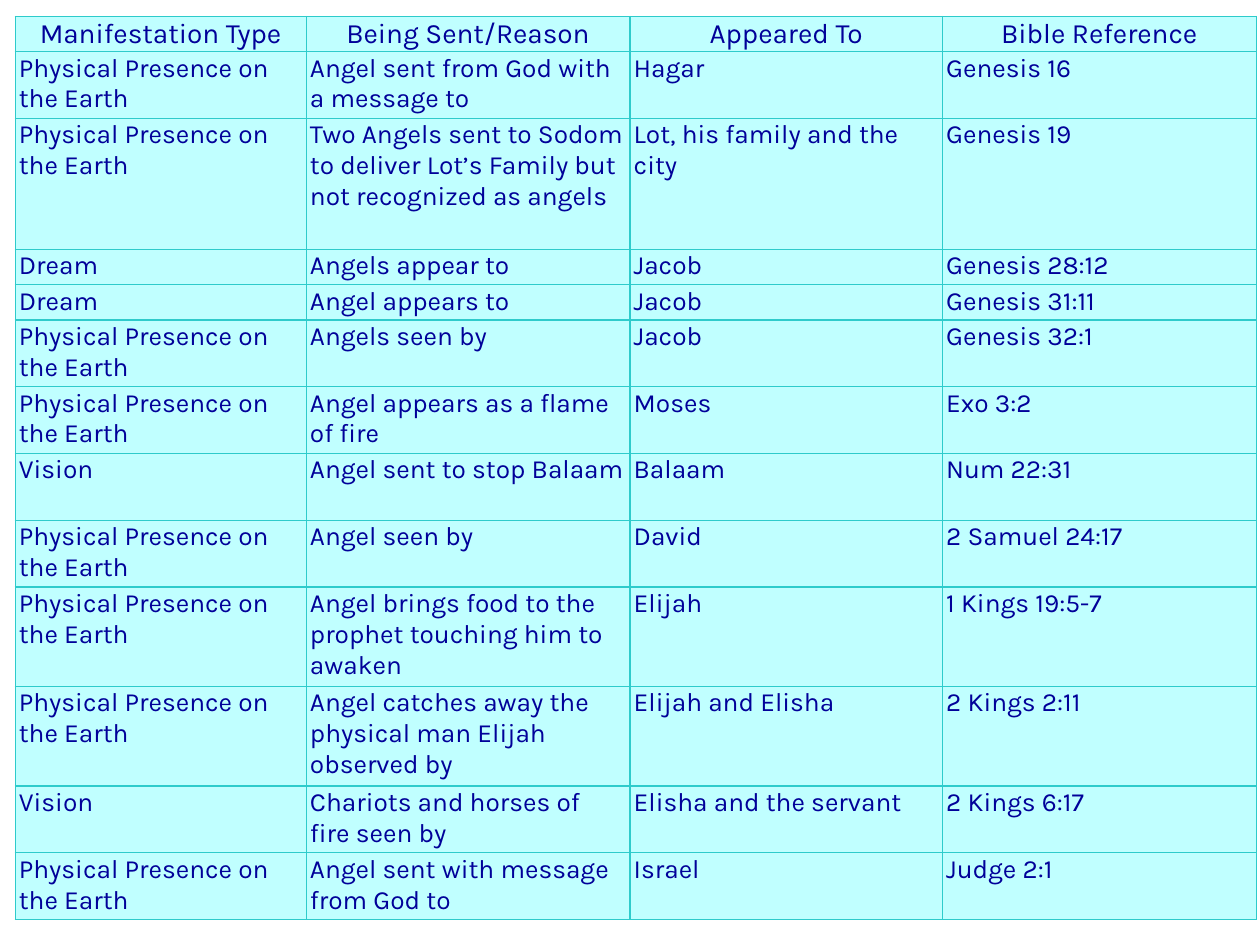
import dataclasses

import lxml.etree
import pptx
import pptx.dml.color
import pptx.enum.text
import pptx.oxml.ns
import pptx.util

Inches = pptx.util.Inches
Pt = pptx.util.Pt


@dataclasses.dataclass(frozen=True)
class Theme:
    font: str = "Karla"
    header_size: int = 16
    body_size: int = 15
    text: str = "010199"
    fill: str = "C0FFFF"
    border: str = "2ECBCB"
    border_width: float = 0.75


THEME = Theme()
COLUMN_WIDTHS = (2.31, 2.57, 2.48, 2.49)
ROW_HEIGHTS = {1: 0.28, 2: 0.53, 3: 0.79, 4: 1.04}  # by number of text lines
HEADINGS = ("Manifestation Type", "Being Sent/Reason", "Appeared To", "Bible Reference")
PRESENCE = "Physical Presence on the Earth"

# Lines of room, then the four cells
APPEARANCES = (
    (2, PRESENCE, "Angel sent from God with a message to", "Hagar", "Genesis 16"),
    (4, PRESENCE,
     "Two Angels sent to Sodom to deliver Lot’s Family but not recognized as angels",
     "Lot, his family and the city", "Genesis 19"),
    (1, "Dream", "Angels appear to", "Jacob", "Genesis 28:12"),
    (1, "Dream", "Angel appears to", "Jacob", "Genesis 31:11"),
    (2, PRESENCE, "Angels seen by", "Jacob", "Genesis 32:1"),
    (2, PRESENCE, "Angel appears as a flame of fire", "Moses", "Exo 3:2"),
    (2, "Vision", "Angel sent to stop Balaam", "Balaam", "Num 22:31"),
    (2, PRESENCE, "Angel seen by", "David", "2 Samuel 24:17"),
    (3, PRESENCE, "Angel brings food to the prophet touching him to awaken",
     "Elijah", "1 Kings 19:5-7"),
    (3, PRESENCE, "Angel catches away the physical man Elijah observed by",
     "Elijah and Elisha", "2 Kings 2:11"),
    (2, "Vision", "Chariots and horses of fire seen by",
     "Elisha and the servant", "2 Kings 6:17"),
    (2, PRESENCE, "Angel sent with message from God to", "Israel", "Judge 2:1"),
)


def rgb(value):
    return pptx.dml.color.RGBColor.from_string(value)


def draw_borders(cell):
    """Outline a cell; border elements must come before its fill."""
    qn = pptx.oxml.ns.qn
    properties = cell._tc.get_or_add_tcPr()
    for position, side in enumerate(("a:lnL", "a:lnR", "a:lnT", "a:lnB")):
        border = lxml.etree.Element(qn(side), w=str(Pt(THEME.border_width)))
        solid = lxml.etree.SubElement(border, qn("a:solidFill"))
        lxml.etree.SubElement(solid, qn("a:srgbClr"), val=THEME.border)
        properties.insert(position, border)


def fill_cell(cell, wording, is_heading):
    cell.margin_left = cell.margin_right = Inches(0.03)
    cell.margin_top = cell.margin_bottom = Inches(0.01)
    cell.fill.solid()
    cell.fill.fore_color.rgb = rgb(THEME.fill)
    draw_borders(cell)

    cell.text_frame.text = wording
    paragraph = cell.text_frame.paragraphs[0]
    if is_heading:
        paragraph.alignment = pptx.enum.text.PP_ALIGN.CENTER
    font = paragraph.runs[0].font
    font.name = THEME.font
    font.size = Pt(THEME.header_size if is_heading else THEME.body_size)
    font.bold = False
    font.color.rgb = rgb(THEME.text)


def add_appearances_table(slide, left, top, width, height):
    rows = ((1, *HEADINGS), *APPEARANCES)
    table = slide.shapes.add_table(
        len(rows), len(HEADINGS), left, top, width, height
    ).table
    table.horz_banding = False

    # Column widths share out the box
    for column, share in zip(table.columns, COLUMN_WIDTHS):
        column.width = int(width * share / sum(COLUMN_WIDTHS))

    # Headings and entries
    for row_index, (lines, *wordings) in enumerate(rows):
        table.rows[row_index].height = Inches(ROW_HEIGHTS[lines])
        for column_index, wording in enumerate(wordings):
            fill_cell(table.cell(row_index, column_index), wording, row_index == 0)


def main():
    presentation = pptx.Presentation()
    presentation.slide_width = Inches(10)
    presentation.slide_height = Inches(7.5)
    slide = presentation.slides.add_slide(presentation.slide_layouts[6])
    add_appearances_table(slide, Inches(0.12), Inches(0.13), Inches(9.85), Inches(7.18))
    presentation.save("out.pptx")


if __name__ == "__main__":
    main()
